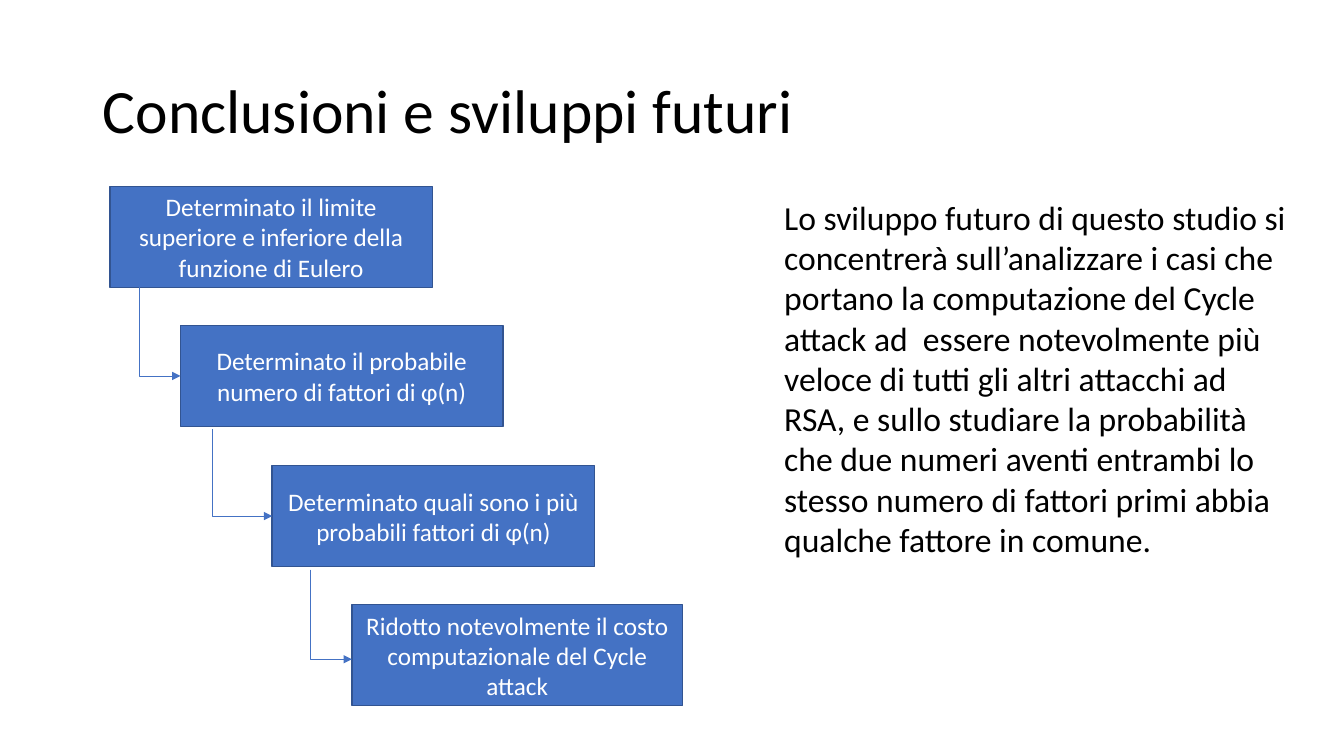
from lxml import etree
from pptx import Presentation
from pptx.dml.color import RGBColor
from pptx.enum import shapes, text
from pptx.oxml import ns
from pptx.util import Inches, Pt

BLUE = RGBColor(0x44, 0x72, 0xC4)
DARK_BLUE = RGBColor(0x32, 0x54, 0x91)
WHITE = RGBColor(0xFF, 0xFF, 0xFF)
BLACK = RGBColor(0, 0, 0)

BOX_HEIGHT = 1
STEPS = [  # left, top, width, wording
    (1.09, 1.85, 3.2, "Determinato il limite superiore e inferiore della funzione di Eulero"),
    (1.79, 3.23, 3.2, "Determinato il probabile numero di fattori di φ(n)"),
    (2.7, 4.62, 3.2, "Determinato quali sono i più probabili fattori di φ(n)"),
    (3.49, 6, 3.28, "Ridotto notevolmente il costo computazionale del Cycle attack"),
]
ARROW_STARTS = [(1.38, 2.85), (2.11, 4.26), (3.08, 5.65)]
ARROW_ENDS = [(1.79, 3.73), (2.7, 5.12), (3.49, 6.54)]
FUTURE_WORK = (
    "Lo sviluppo futuro di questo studio si concentrerà sull’analizzare i casi che "
    "portano la computazione del Cycle attack ad  essere notevolmente più veloce di "
    "tutti gli altri attacchi ad RSA, e sullo studiare la probabilità che due numeri "
    "aventi entrambi lo stesso numero di fattori primi abbia qualche fattore in comune."
)


def write(shape, wording, size, color, alignment, anchor):
    frame = shape.text_frame
    frame.text = wording
    frame.word_wrap = True
    frame.vertical_anchor = anchor
    paragraph = frame.paragraphs[0]
    paragraph.alignment = alignment
    font = paragraph.runs[0].font
    font.color.rgb = color
    for name, value in {"name": "Calibri", "size": Pt(size)}.items():
        setattr(font, name, value)
    return paragraph


def add_down_right_arrow(slide, start, end):
    """Draw an elbow arrow that drops from start, then runs right to end."""
    run, drop = end[0] - start[0], end[1] - start[1]
    # The turned elbow keeps its centre while its width and height swap.
    left = (start[0] + end[0] - drop) / 2
    top = (start[1] + end[1] - run) / 2
    arrow = slide.shapes.add_connector(
        shapes.MSO_CONNECTOR.ELBOW,
        Inches(left), Inches(top), Inches(left + drop), Inches(top + run))
    arrow.line.color.rgb = BLUE
    arrow.line.width = Pt(0.5)
    properties = arrow._element.spPr
    properties.find(ns.qn("a:prstGeom")).set("prst", "bentConnector2")
    transform = properties.find(ns.qn("a:xfrm"))
    transform.set("rot", str(270 * 60000))
    transform.set("flipH", "1")
    line = properties.find(ns.qn("a:ln"))
    etree.SubElement(line, ns.qn("a:tailEnd"), type="triangle")
    etree.SubElement(properties, ns.qn("a:effectLst"))


presentation = Presentation()
presentation.slide_width = Inches(13.33)
presentation.slide_height = Inches(7.5)
slide = presentation.slides.add_slide(presentation.slide_layouts[5])

title = slide.shapes.title
title_place = {"left": 0.92, "top": 0.4, "width": 11.5, "height": 1.45}
for name, value in title_place.items():
    setattr(title, name, Inches(value))
title_paragraph = write(title, "Conclusioni e sviluppi futuri", 44, BLACK,
                        text.PP_ALIGN.LEFT, text.MSO_ANCHOR.MIDDLE)
title_paragraph.line_spacing = 0.9

for left, top, width, wording in STEPS:
    box = slide.shapes.add_shape(
        shapes.MSO_SHAPE.RECTANGLE,
        Inches(left), Inches(top), Inches(width), Inches(BOX_HEIGHT))
    box.shadow.inherit = False
    box.fill.solid()
    box.fill.fore_color.rgb = BLUE
    box.line.color.rgb = DARK_BLUE
    box.line.width = Pt(1)
    write(box, wording, 18, WHITE, text.PP_ALIGN.CENTER, text.MSO_ANCHOR.MIDDLE)

future_box = slide.shapes.add_textbox(
    Inches(7.68), Inches(1.9), Inches(5.2), Inches(3.74))
write(future_box, FUTURE_WORK, 24, BLACK, text.PP_ALIGN.LEFT, text.MSO_ANCHOR.TOP)
future_box.text_frame.auto_size = text.MSO_AUTO_SIZE.SHAPE_TO_FIT_TEXT

for start, end in zip(ARROW_STARTS, ARROW_ENDS):
    add_down_right_arrow(slide, start, end)

presentation.save("out.pptx")
